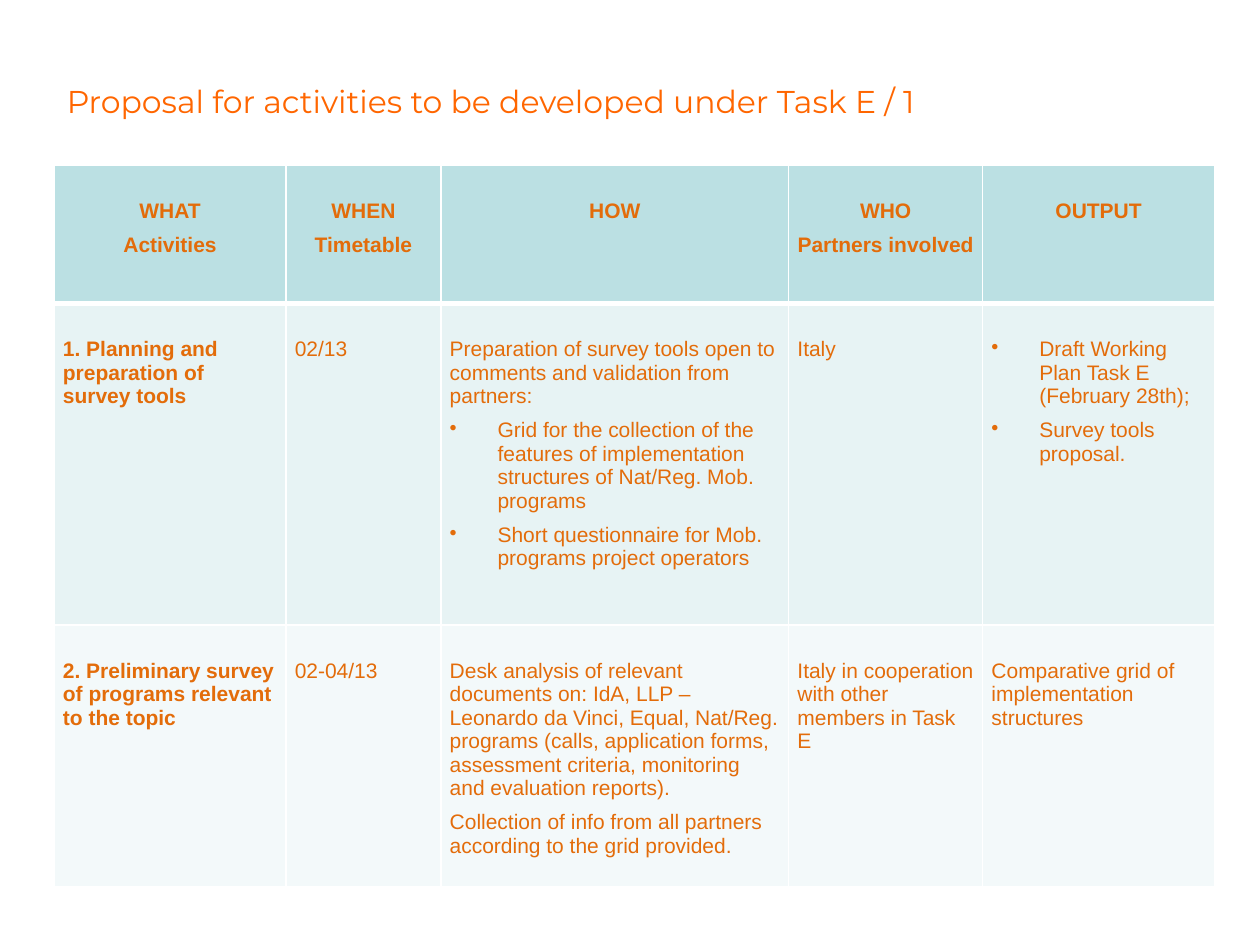
from dataclasses import dataclass

from pptx import Presentation
from pptx import util as u
from pptx.dml.color import RGBColor
from pptx.enum import text
from pptx.oxml import parse_xml
from pptx.oxml.ns import nsdecls, qn

TITLE_ORANGE = RGBColor(0xFF, 0x66, 0x00)
TEXT_ORANGE = RGBColor(0xE3, 0x6C, 0x0A)
WHITE = RGBColor(0xFF, 0xFF, 0xFF)
HEADER_FILL = RGBColor(0xBB, 0xE0, 0xE3)
ROW_FILLS = (RGBColor(0xE7, 0xF3, 0xF4), RGBColor(0xF3, 0xF9, 0xFA))

COL_WIDTHS = (1.84, 1.23, 2.76, 1.54, 1.84)
ROW_HEIGHTS = (1.1, 2.55, 2.08)
THIN, THICK = 1, 3


@dataclass(frozen=True)
class Line:
    words: str
    bullet: bool = False


@dataclass(frozen=True)
class Activity:
    what: list[Line]
    when: list[Line]
    how: list[Line]
    who: list[Line]
    output: list[Line]

    def columns(self) -> list[list[Line]]:
        return [self.what, self.when, self.how, self.who, self.output]


HEADER = Activity(
    [Line("WHAT"), Line("Activities")],
    [Line("WHEN"), Line("Timetable")],
    [Line("HOW")],
    [Line("WHO"), Line("Partners involved")],
    [Line("OUTPUT")],
)
ACTIVITIES = (
    Activity(
        [Line("1. Planning and preparation of survey tools")],
        [Line("02/13")],
        [
            Line("Preparation of survey tools open to comments and validation from partners:"),
            Line("Grid for the collection of the features of implementation "
                 "structures of Nat/Reg. Mob. programs", True),
            Line("Short questionnaire for Mob. programs project operators", True),
        ],
        [Line("Italy")],
        [
            Line("Draft Working Plan Task E (February 28th);", True),
            Line("Survey tools proposal.", True),
        ],
    ),
    Activity(
        [Line("2. Preliminary survey of programs relevant to the topic")],
        [Line("02-04/13")],
        [
            Line("Desk analysis of relevant documents on: IdA, LLP – Leonardo da Vinci, "
                 "Equal, Nat/Reg. programs (calls, application forms, assessment criteria, "
                 "monitoring and evaluation reports)."),
            Line("Collection of info from all partners according to the grid provided."),
        ],
        [Line("Italy in cooperation with other members in Task E")],
        [Line("Comparative grid of implementation structures")],
    ),
)


def add_run(p, words: str, font: str, size: int, color: RGBColor, bold: bool) -> None:
    r = p.add_run()
    r.text = words
    r.font.name = font
    r.font.size = u.Pt(size)
    r.font.color.rgb = color
    r.font.bold = bold


def set_bullet(p) -> None:
    pPr = p._p.get_or_add_pPr()
    pPr.set("marL", str(u.Inches(0.38)))
    pPr.set("indent", str(-u.Inches(0.38)))
    pPr.append(parse_xml(f'<a:buChar {nsdecls("a")} char="•"/>'))


def set_borders(cell, top: int, bottom: int) -> None:
    tcPr = cell._tc.get_or_add_tcPr()
    for side, width in (("L", THIN), ("R", THIN), ("T", top), ("B", bottom)):
        tcPr.append(parse_xml(
            f'<a:ln{side} {nsdecls("a")} w="{u.Pt(width)}"><a:solidFill>'
            f'<a:srgbClr val="{WHITE}"/></a:solidFill></a:ln{side}>'))


def fill_cell(cell, lines: list[Line], fill: RGBColor, bold: bool, centered: bool) -> None:
    cell.fill.solid()
    cell.fill.fore_color.rgb = fill
    cell.margin_left = cell.margin_right = u.Inches(0.07)
    cell.margin_top, cell.margin_bottom = u.Inches(0.27), 0
    tf = cell.text_frame
    for i, line in enumerate(lines):
        p = tf.add_paragraph() if i else tf.paragraphs[0]
        if line.bullet:
            set_bullet(p)
        if i:
            p.space_before = u.Pt(6)
        p.alignment = text.PP_ALIGN.CENTER if centered else text.PP_ALIGN.LEFT
        add_run(p, line.words, "Arial", 12, TEXT_ORANGE, bold)


def add_title(s) -> None:
    title = s.shapes.title
    title.left, title.top = u.Inches(0.43), u.Inches(0.6)
    title.width, title.height = u.Inches(8.58), u.Inches(0.4)
    tf = title.text_frame
    tf.word_wrap = True
    tf.vertical_anchor = text.MSO_ANCHOR.TOP
    p = tf.paragraphs[0]
    p.alignment = text.PP_ALIGN.LEFT
    add_run(p, "Proposal for activities to be developed under Task E / 1",
            "Montserrat", 18, TITLE_ORANGE, False)


def add_activity_table(s) -> None:
    rows = (HEADER, *ACTIVITIES)
    fills = (HEADER_FILL, *ROW_FILLS)
    table = s.shapes.add_table(
        len(rows), len(COL_WIDTHS), u.Inches(0.43), u.Inches(1.31),
        u.Inches(sum(COL_WIDTHS)), u.Inches(sum(ROW_HEIGHTS))).table
    for column, width in zip(table.columns, COL_WIDTHS):
        column.width = u.Inches(width)
    for i, (activity, fill) in enumerate(zip(rows, fills)):
        table.rows[i].height = u.Inches(ROW_HEIGHTS[i])
        for j, lines in enumerate(activity.columns()):
            cell = table.cell(i, j)
            set_borders(cell, THICK if i == 1 else THIN, THICK if i == 0 else THIN)
            fill_cell(cell, lines, fill, bold=i == 0 or j == 0, centered=i == 0)


def main() -> None:
    prs = Presentation()
    prs.slide_width, prs.slide_height = u.Inches(10), u.Inches(7.5)
    s = prs.slides.add_slide(prs.slide_layouts[5])
    add_title(s)
    add_activity_table(s)
    prs.save("out.pptx")


if __name__ == "__main__":
    main()
